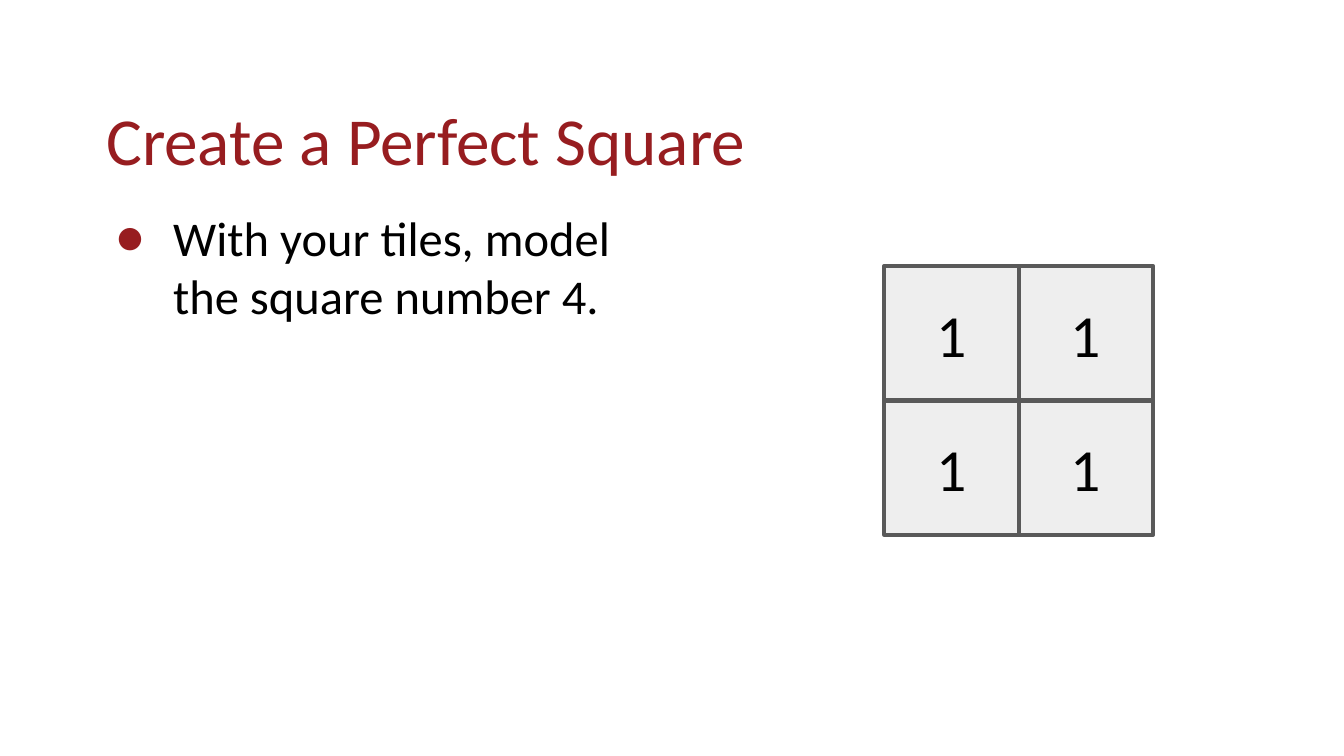
from dataclasses import dataclass

import pptx
import pptx.dml.color
import pptx.enum.shapes
import pptx.enum.text
import pptx.oxml
import pptx.oxml.ns
import pptx.util

Inches = pptx.util.Inches
Pt = pptx.util.Pt
Anchor = pptx.enum.text.MSO_ANCHOR
Align = pptx.enum.text.PP_ALIGN

FONT = "Calibri"
RED, BLACK, TILE_FILL, TILE_LINE = "971D20", "000000", "EEEEEE", "595959"

# Widescreen slide, and the tile grid in inches
SLIDE_WIDTH = 10
SLIDE_HEIGHT = SLIDE_WIDTH * 9 / 16
GRID_LEFT, GRID_TOP, TILE_SIZE = 6.58, 1.98, 1


@dataclass
class Tile:
    column: int
    row: int
    label: str = "1"


def colour(value: str) -> pptx.dml.color.RGBColor:
    return pptx.dml.color.RGBColor.from_string(value)


def place(shape, left: float, top: float, width: float, height: float) -> None:
    shape.left, shape.top = Inches(left), Inches(top)
    shape.width, shape.height = Inches(width), Inches(height)


def add_bullet(para, ink: str, indent: float, hanging: float) -> None:
    properties = para._p.get_or_add_pPr()
    properties.set("marL", str(Inches(indent)))
    properties.set("indent", str(-Inches(hanging)))
    namespace = pptx.oxml.ns.nsdecls("a")
    for xml in (
        f'<a:buClr {namespace}><a:srgbClr val="{ink}"/></a:buClr>',
        f'<a:buFont {namespace} typeface="{FONT}"/>',
        f'<a:buChar {namespace} char="●"/>',
    ):
        properties.append(pptx.oxml.parse_xml(xml))


def write(shape, text: str, size: float, ink: str, anchor: Anchor,
          align: Align, inset: float = 0.05, bullet: bool = False):
    """Fill a shape with one paragraph and return that paragraph."""
    frame = shape.text_frame
    frame.word_wrap = True
    frame.auto_size = pptx.enum.text.MSO_AUTO_SIZE.NONE
    frame.vertical_anchor = anchor
    frame.margin_left = frame.margin_right = Inches(0.1)
    frame.margin_top = frame.margin_bottom = Inches(inset)
    frame.text = text
    para = frame.paragraphs[0]
    para.alignment = align
    if bullet:
        add_bullet(para, RED, 0.5, 0.43)
    para.font.name = FONT
    para.font.size = Pt(size)
    para.font.color.rgb = colour(ink)
    return para


def draw_tile(page, tile: Tile) -> None:
    square = page.shapes.add_shape(
        pptx.enum.shapes.MSO_SHAPE.RECTANGLE,
        Inches(GRID_LEFT + tile.column * TILE_SIZE),
        Inches(GRID_TOP + tile.row * TILE_SIZE),
        Inches(TILE_SIZE),
        Inches(TILE_SIZE),
    )
    square.shadow.inherit = False
    square.fill.solid()
    square.fill.fore_color.rgb = colour(TILE_FILL)
    square.line.color.rgb = colour(TILE_LINE)
    square.line.width = Pt(2.25)
    write(square, tile.label, 32, BLACK, Anchor.MIDDLE, Align.CENTER, 0.1)


def main() -> None:
    deck = pptx.Presentation()
    deck.slide_width = Inches(SLIDE_WIDTH)
    deck.slide_height = Inches(SLIDE_HEIGHT)
    page = deck.slides.add_slide(deck.slide_layouts.get_by_name("Title Only"))

    # Title
    title = page.shapes.title
    place(title, 0.69, 0.3, 8.62, 1.09)
    heading = write(title, "Create a Perfect Square", 36, RED,
                    Anchor.BOTTOM, Align.LEFT)
    heading.line_spacing = 0.9

    # Instruction
    box = page.shapes.add_textbox(0, 0, 0, 0)
    place(box, 0.69, 1.5, 4.23, 3.57)
    write(box, "With your tiles, model the square number 4.", 26, BLACK,
          Anchor.TOP, Align.LEFT, bullet=True)

    # Two-by-two square of unit tiles
    for row in range(2):
        for column in range(2):
            draw_tile(page, Tile(column, row))

    deck.save("out.pptx")


if __name__ == "__main__":
    main()
